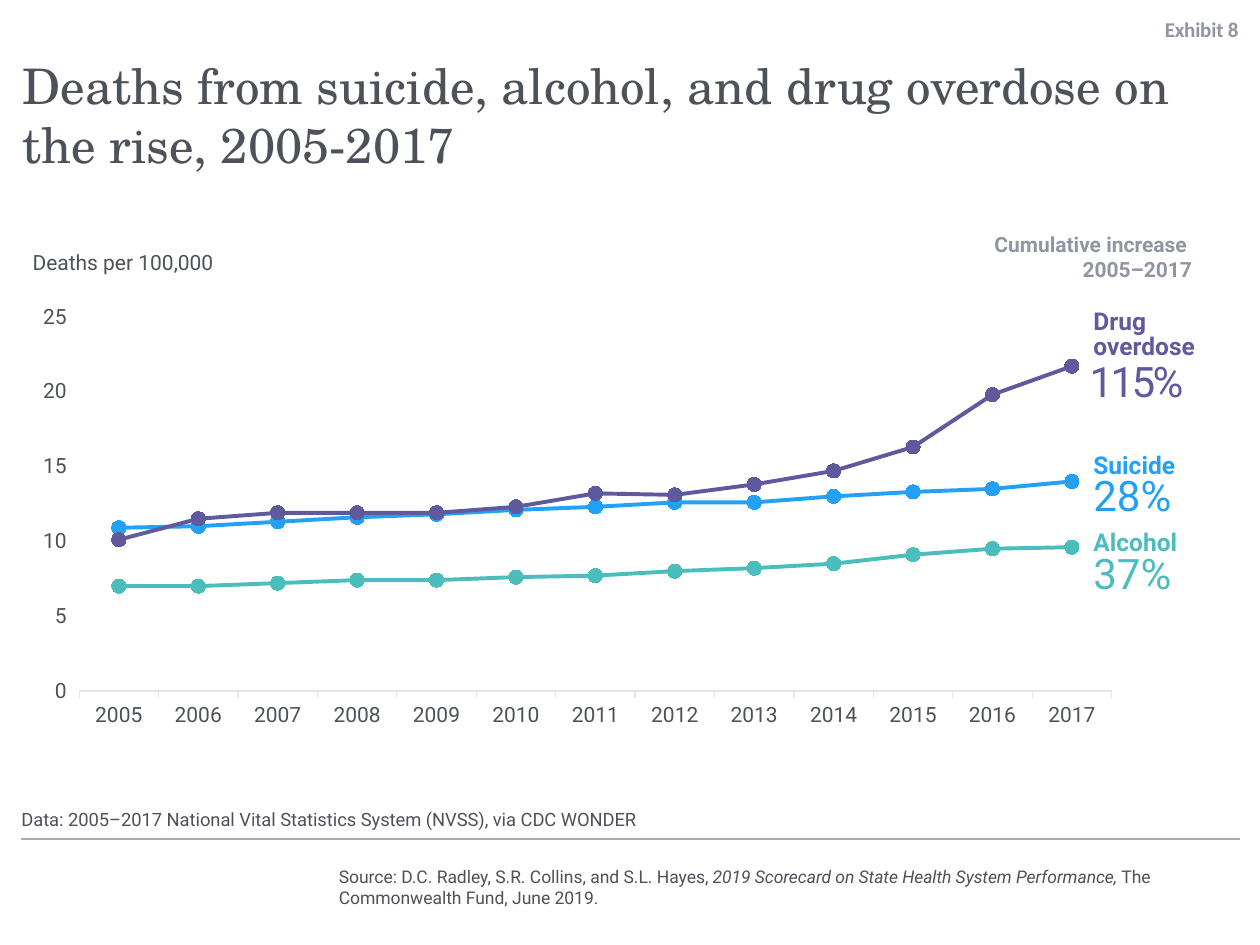
from lxml import etree
from pptx import Presentation
from pptx.chart.data import CategoryChartData
from pptx.dml.color import RGBColor
from pptx.enum.chart import XL_CHART_TYPE, XL_MARKER_STYLE, XL_TICK_MARK
from pptx.enum.shapes import MSO_CONNECTOR
from pptx.enum.text import MSO_ANCHOR, MSO_AUTO_SIZE, PP_ALIGN
from pptx.oxml import parse_xml
from pptx.oxml.ns import nsdecls, qn
from pptx.util import Inches, Pt

TEXT = RGBColor(0x4C, 0x51, 0x5A)
MUTED = RGBColor(0x8F, 0x95, 0xA1)
RULE = RGBColor(0xAB, 0xAB, 0xAB)
AXIS = RGBColor(0xE3, 0xE5, 0xE7)
TEAL = RGBColor(0x4A, 0xBD, 0xBC)
BLUE = RGBColor(0x23, 0xA0, 0xF8)
PURPLE = RGBColor(0x5F, 0x5A, 0x9D)

BODY_FONT = "Roboto"
YEARS = [str(year) for year in range(2005, 2018)]
SERIES = [
    ("Alcohol", TEAL,
     [7, 7, 7.2, 7.4, 7.4, 7.6, 7.7, 8, 8.2, 8.5, 9.1, 9.5, 9.6]),
    ("Suicide", BLUE,
     [10.9, 11, 11.3, 11.6, 11.8, 12.1, 12.3, 12.6, 12.6, 13, 13.3, 13.5, 14]),
    ("Drug overdose", PURPLE,
     [10.1, 11.5, 11.9, 11.9, 11.9, 12.3, 13.2, 13.1, 13.8, 14.7, 16.3, 19.8, 21.7]),
]


def set_font(font, size, color, name=BODY_FONT, bold=False):
    font.name = name
    font.size = Pt(size)
    font.bold = bold
    font.color.rgb = color


def set_letter_spacing(paragraph, points):
    for run in paragraph.runs:
        run._r.get_or_add_rPr().set("spc", str(round(points * 100)))


def remove_insets(frame):
    frame.margin_left = frame.margin_right = 0
    frame.margin_top = frame.margin_bottom = 0


def add_title(slide, text):
    title = slide.shapes.title
    title.left, title.top = Inches(0.18), Inches(0.39)
    title.width, title.height = Inches(9.67), Inches(1.04)
    frame = title.text_frame
    frame.text = text
    frame.auto_size = MSO_AUTO_SIZE.NONE
    frame.vertical_anchor = MSO_ANCHOR.MIDDLE
    remove_insets(frame)
    paragraph = frame.paragraphs[0]
    paragraph.alignment = PP_ALIGN.LEFT
    set_font(paragraph.font, 28, TEXT, "TeX Gyre Schola")


def add_text(slide, lines, left, top, width, height, size, color, bold=False,
             font=BODY_FONT, align=PP_ALIGN.LEFT, anchor=MSO_ANCHOR.TOP):
    """Add a text box with one paragraph per line and return its text frame."""
    box = slide.shapes.add_textbox(
        Inches(left), Inches(top), Inches(width), Inches(height))
    frame = box.text_frame
    frame.word_wrap = True
    frame.vertical_anchor = anchor
    frame.text = "\n".join(lines)
    for paragraph in frame.paragraphs:
        paragraph.alignment = align
        set_font(paragraph.font, size, color, font, bold)
    return frame


def add_source(slide):
    frame = add_text(
        slide, ["Source: D.C. Radley, S.R. Collins, and S.L. Hayes, "],
        2.59, 6.82, 7.25, 0.44, 10, TEXT, anchor=MSO_ANCHOR.MIDDLE)
    paragraph = frame.paragraphs[0]
    report = paragraph.add_run()
    report.text = "2019 Scorecard on State Health System Performance, "
    report.font.italic = True
    paragraph.add_run().text = "The Commonwealth Fund, June 2019."


def add_rule(slide):
    rule = slide.shapes.add_connector(
        MSO_CONNECTOR.STRAIGHT, Inches(9.84), Inches(6.66), Inches(0.17), Inches(6.66))
    rule.line.color.rgb = RULE
    rule.line.width = Pt(0.75)
    etree.SubElement(rule._element.spPr, qn("a:effectLst"))


def set_plot_layout(chart, x, y, width, height):
    """Fix the inner plot area, in fractions of the chart frame."""
    plot_area = chart._chartSpace.chart.plotArea
    for layout in plot_area.findall(qn("c:layout")):
        plot_area.remove(layout)
    plot_area.insert(0, parse_xml(
        f'<c:layout {nsdecls("c")}><c:manualLayout><c:layoutTarget val="inner"/>'
        '<c:xMode val="edge"/><c:yMode val="edge"/>'
        f'<c:x val="{x}"/><c:y val="{y}"/><c:w val="{width}"/><c:h val="{height}"/>'
        '</c:manualLayout></c:layout>'))


def style_axes(chart):
    for axis in (chart.category_axis, chart.value_axis):
        axis.has_major_gridlines = False
        axis.major_tick_mark = XL_TICK_MARK.OUTSIDE
        set_font(axis.tick_labels.font, 12, TEXT)
    category_line = chart.category_axis.format.line
    category_line.color.rgb = AXIS
    category_line.width = Pt(0.75)
    value_axis = chart.value_axis
    value_axis.format.line.fill.background()
    value_axis.minimum_scale = 0
    value_axis.maximum_scale = 25
    value_axis.major_unit = 5


def style_series(series, color):
    series.smooth = False
    series.format.line.color.rgb = color
    series.format.line.width = Pt(2.25)
    marker = series.marker
    marker.style = XL_MARKER_STYLE.CIRCLE
    marker.size = 8
    marker.format.fill.solid()
    marker.format.fill.fore_color.rgb = color
    marker.format.line.color.rgb = color


def add_deaths_chart(slide):
    data = CategoryChartData(number_format="General")
    data.categories = YEARS
    for name, _, values in SERIES:
        data.add_series(name, values)
    chart = slide.shapes.add_chart(
        XL_CHART_TYPE.LINE_MARKERS, Inches(0.16), Inches(2.35),
        Inches(8.84), Inches(3.51), data).chart
    chart.has_title = False
    chart.has_legend = False
    set_font(chart.font, 10, TEXT)
    chart.plots[0].vary_by_categories = False
    set_plot_layout(chart, 0.053, 0.047, 0.927, 0.846)
    style_axes(chart)
    for series, (_, color, _) in zip(chart.plots[0].series, SERIES):
        style_series(series, color)


def add_increase_labels(slide):
    for name, increase, color, name_top, increase_top in (
            ("Suicide", "28%", BLUE, 3.52, 3.68),
            ("Alcohol", "37%", TEAL, 4.13, 4.3)):
        add_text(slide, [name], 8.58, name_top, 0.97, 0.34, 14, color, bold=True)
        add_text(slide, [increase], 8.58, increase_top, 0.94, 0.5, 24, color)

    overdose = add_text(
        slide, ["Drug overdose"], 8.58, 2.42, 1.26, 0.5, 14, PURPLE, bold=True)
    overdose.paragraphs[0].line_spacing = Pt(14)
    increase = add_text(slide, ["115%"], 8.55, 2.77, 1.18, 0.5, 24, PURPLE)
    set_letter_spacing(increase.paragraphs[0], -1.5)


def main():
    presentation = Presentation()
    presentation.slide_width = Inches(10)
    presentation.slide_height = Inches(7.5)
    slide = presentation.slides.add_slide(presentation.slide_layouts[5])

    add_rule(slide)
    add_source(slide)
    add_title(slide, "Deaths from suicide, alcohol, and drug overdose on the rise, 2005-2017")
    data_note = add_text(
        slide, ["Data: 2005–2017 National Vital Statistics System (NVSS), via CDC WONDER"],
        0.17, 6.09, 9.67, 0.5, 10.5, TEXT, anchor=MSO_ANCHOR.BOTTOM)
    remove_insets(data_note)
    exhibit = add_text(
        slide, ["Exhibit 8"], 7.96, 0.07, 1.87, 0.33, 12, MUTED, bold=True,
        font="Calibri", align=PP_ALIGN.RIGHT, anchor=MSO_ANCHOR.MIDDLE)
    remove_insets(exhibit)
    set_letter_spacing(exhibit.paragraphs[0], -0.1)

    add_deaths_chart(slide)
    add_increase_labels(slide)
    add_text(slide, ["Cumulative increase ", "2005–2017"], 7.44, 1.79, 2.12, 0.5,
             12, MUTED, bold=True, align=PP_ALIGN.RIGHT)
    add_text(slide, ["Deaths per 100,000"], 0.16, 1.93, 2.65, 0.3, 12, TEXT)
    presentation.save("out.pptx")


if __name__ == "__main__":
    main()
